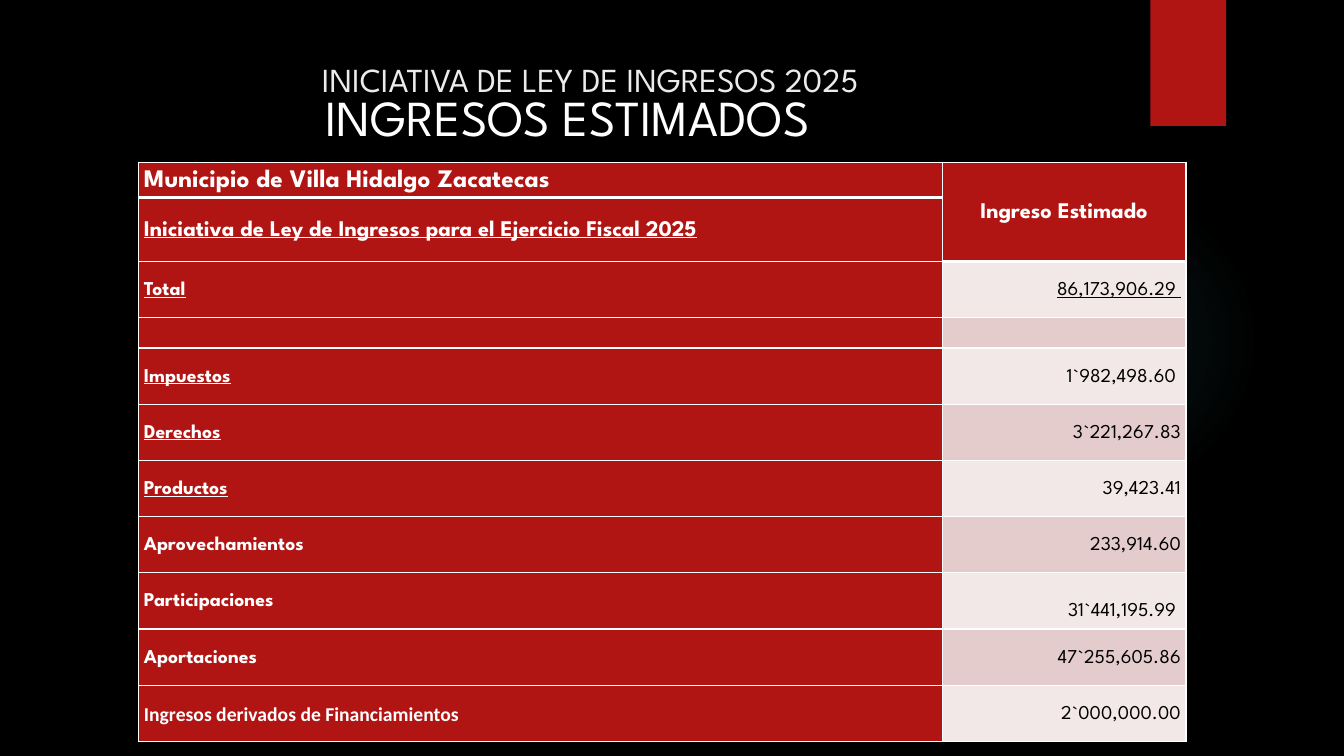
from pptx import Presentation
from pptx.dml.color import RGBColor
from pptx.enum.shapes import MSO_SHAPE
from pptx.enum.text import MSO_ANCHOR, PP_ALIGN
from pptx.oxml import parse_xml
from pptx.oxml.ns import nsdecls
from pptx.util import Pt

# Content
TITLE = "INICIATIVA DE LEY DE INGRESOS 2025"
SUBTITLE = "INGRESOS ESTIMADOS"
HEADINGS = ["Municipio de Villa Hidalgo Zacatecas",
            "Iniciativa de Ley de Ingresos para el Ejercicio Fiscal 2025"]
VALUE_HEADING = "Ingreso Estimado"
INCOME = [  # concept, estimate, concept underlined
    ("Total", "\t86,173,906.29 ", True),
    ("", "", False),
    ("Impuestos", "1`982,498.60 ", True),
    ("Derechos", "3`221,267.83", True),
    ("Productos", "39,423.41", True),
    ("Aprovechamientos", "233,914.60", False),
    ("Participaciones", "31`441,195.99 ", False),
    ("Aportaciones", "47`255,605.86", False),
    ("Ingresos derivados de Financiamientos", "2`000,000.00", False),
]

THEME = {
    "black": "000000", "white": "FFFFFF", "title": "EBEBEB", "red": "B01513",
    "glow": "50B9C1", "bands": ["F2E8E7", "E4CCCC"],
    "font": "League Spartan", "alt_font": "Calibri",
    "title_size": 24, "subtitle_size": 36, "head_sizes": [18, 16], "body_size": 14,
}

# Layout, in points
SLIDE_W, SLIDE_H = 960, 540
COLS = [573.8, 174.2]
HEAD_ROWS = [25.2, 45.8]
ROW_H, GAP_ROW_H = 40.15, 19.5
TABLE_X, TABLE_Y = 99.2, 115.8
INSET, THIN, THICK = 3.6, 1, 3
TOTAL_INDENT, TOTAL_TAB = 37, 41.4  # underline starts before the figure
LOWERED = 14


def rgb(name):
    return RGBColor.from_string(name)


def write(p, text, size, color, font=THEME["font"], align=PP_ALIGN.LEFT, **extra):
    p.alignment = align
    r = p.add_run()
    r.text = text
    r.font.color.rgb = rgb(color)
    for key, value in {"name": font, "size": Pt(size), **extra}.items():
        setattr(r.font, key, value)


def add_text(s, box, text, size, color, **fmt):
    tf = s.shapes.add_textbox(*map(Pt, box)).text_frame
    tf.word_wrap = True
    write(tf.paragraphs[0], text, size, color, **fmt)
    return tf


def add_plain(s, kind, box, color):
    sp = s.shapes.add_shape(kind, *map(Pt, box))
    sp.shadow.inherit = False
    sp.fill.solid()
    sp.fill.fore_color.rgb = rgb(color)
    sp.line.fill.background()
    return sp


def style_cell(cell, fill, top=THIN, bottom=THIN):
    tcPr = cell._tc.get_or_add_tcPr()
    for side, width in {"L": THIN, "R": THIN, "T": top, "B": bottom}.items():
        tcPr.append(parse_xml(
            f'<a:ln{side} {nsdecls("a")} w="{Pt(width)}"><a:solidFill>'
            f'<a:srgbClr val="{THEME["white"]}"/></a:solidFill></a:ln{side}>'))
    cell.fill.solid()
    cell.fill.fore_color.rgb = rgb(fill)
    cell.vertical_anchor = MSO_ANCHOR.MIDDLE
    for side, inset in {"left": INSET, "right": INSET, "top": 0, "bottom": 0}.items():
        setattr(cell, f"margin_{side}", Pt(inset))


def write_cell(cell, text, size, color, **fmt):
    p = cell.text_frame.paragraphs[0]
    p.line_spacing = 1.15 if text else 1.0
    write(p, text, size, color, **fmt)


prs = Presentation()
prs.slide_width, prs.slide_height = Pt(SLIDE_W), Pt(SLIDE_H)
s = prs.slides.add_slide(prs.slide_layouts[6])
s.background.fill.solid()
s.background.fill.fore_color.rgb = rgb(THEME["black"])

# Soft glow and red tab
glow = add_plain(s, MSO_SHAPE.OVAL, (677.5, 131.8, 221.8, 221.8), THEME["glow"])
stops = "".join(
    f'<a:gs pos="{pos}000"><a:srgbClr val="{THEME["glow"]}"><a:alpha val="{alpha}000"/>'
    f'</a:srgbClr></a:gs>' for pos, alpha in [(0, 7), (36, 6), (69, 0), (100, 0)])
solid = glow.fill._xPr.solidFill
solid.getparent().replace(solid, parse_xml(
    f'<a:gradFill {nsdecls("a")}><a:gsLst>{stops}</a:gsLst><a:path path="circle">'
    '<a:fillToRect l="50000" t="50000" r="50000" b="50000"/></a:path></a:gradFill>'))
add_plain(s, MSO_SHAPE.RECTANGLE, (821.8, 0, 54, 90), THEME["red"])

# Titles
tf = add_text(s, (51.1, 36, 740.9, 41), TITLE, THEME["title_size"], THEME["title"],
              align=PP_ALIGN.CENTER)
tf.vertical_anchor = MSO_ANCHOR.MIDDLE
add_text(s, (225.4, 57.6, 403.9, 51.1), SUBTITLE, THEME["subtitle_size"], THEME["white"])

# Table frame
heights = HEAD_ROWS + [ROW_H if concept else GAP_ROW_H for concept, _, _ in INCOME]
table = s.shapes.add_table(len(heights), 2, Pt(TABLE_X), Pt(TABLE_Y),
                           Pt(sum(COLS)), Pt(sum(heights))).table
table.first_row = table.horz_banding = False
for col, width in zip(table.columns, COLS):
    col.width = Pt(width)
for row, height in zip(table.rows, heights):
    row.height = Pt(height)

# Heading rows
for i, (text, size) in enumerate(zip(HEADINGS, THEME["head_sizes"])):
    left, right = table.cell(i, 0), table.cell(i, 1)
    style_cell(left, THEME["red"], top=(THIN, THICK)[i], bottom=(THICK, THIN)[i])
    style_cell(right, THEME["red"], bottom=THICK)
    write_cell(left, text, size, THEME["white"], align=PP_ALIGN.JUSTIFY,
               bold=True, underline=i == 1)
table.cell(0, 1).merge(table.cell(1, 1))
write_cell(table.cell(0, 1), VALUE_HEADING, THEME["head_sizes"][1], THEME["white"],
           align=PP_ALIGN.CENTER, bold=True)

# Income rows
for i, (concept, value, underlined) in enumerate(INCOME):
    left, right = (table.cell(i + len(HEADINGS), c) for c in range(2))
    is_total = concept == "Total"
    style_cell(left, THEME["red"])
    style_cell(right, THEME["bands"][i % 2], top=THICK if is_total else THIN)
    font = THEME["alt_font"] if concept.startswith("Ingresos") else THEME["font"]
    write_cell(left, concept, THEME["body_size"], THEME["white"], font=font,
               bold=True, underline=underlined)
    if is_total:
        right.margin_left = Pt(INSET + TOTAL_INDENT)
        right.text_frame.paragraphs[0]._p.get_or_add_pPr().append(parse_xml(
            f'<a:tabLst {nsdecls("a")}><a:tab pos="{Pt(TOTAL_TAB)}" algn="l"/></a:tabLst>'))
    if concept == "Participaciones":
        right.margin_top = Pt(LOWERED)
    write_cell(right, value, THEME["body_size"], THEME["black"], bold=False,
               align=PP_ALIGN.LEFT if is_total else PP_ALIGN.RIGHT, underline=is_total)

prs.save("out.pptx")
